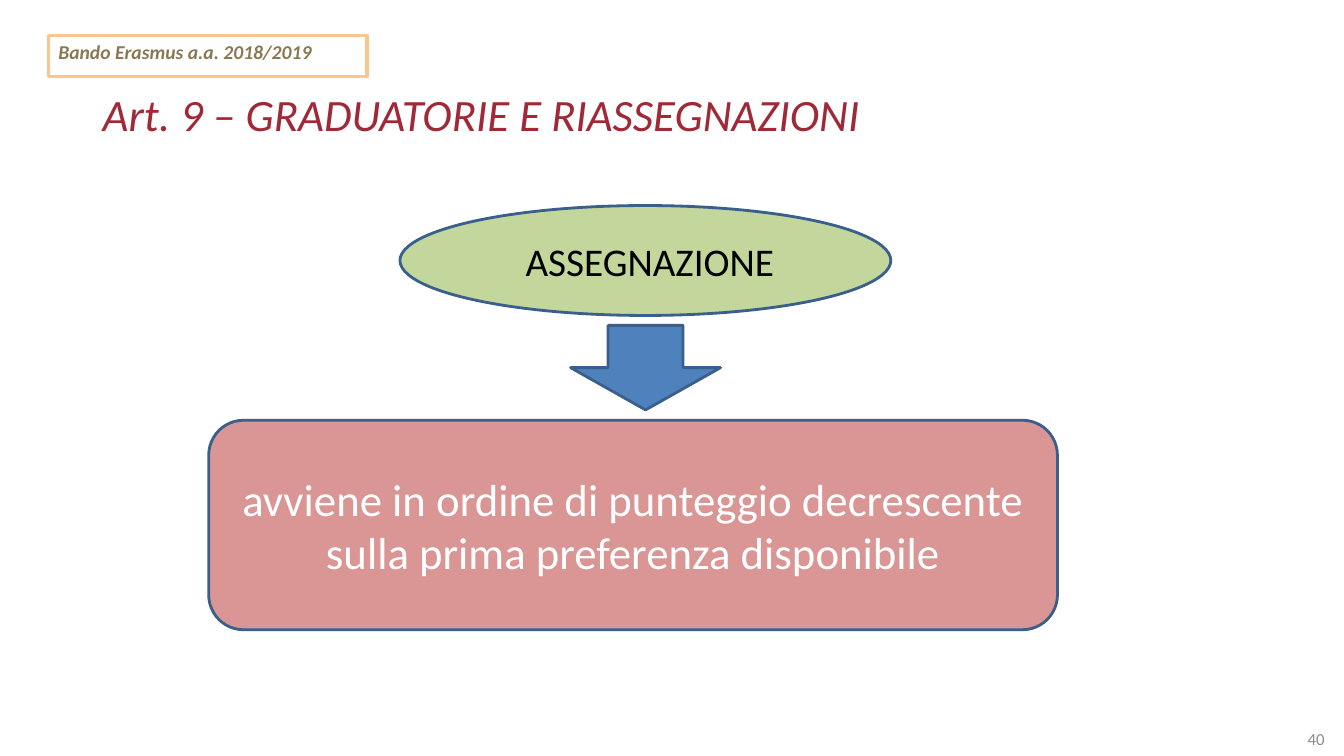
from dataclasses import dataclass

from pptx import Presentation
from pptx.dml.color import RGBColor
from pptx.enum.shapes import MSO_SHAPE as Shape
from pptx.enum.text import MSO_ANCHOR as Anchor, PP_ALIGN as Align
from pptx.util import Cm, Pt


@dataclass(frozen=True)
class Theme:
    font: str = "Calibri"
    title_color: str = "9F2936"
    number_color: str = "8B8B8B"
    banner_color: str = "887952"
    banner_line: str = "FBC58E"
    outline: str = "3A5F8C"
    step_fill: str = "C3D69B"
    step_color: str = "000000"
    arrow_fill: str = "4F81BD"
    rule_fill: str = "D99694"
    rule_color: str = "FFFFFF"
    large: int = 32
    medium: int = 28
    small: int = 14
    tiny: int = 12


theme = Theme()


def write(shape, text, size, color, align=Align.LEFT, anchor=Anchor.MIDDLE,
          bold=False, italic=False):
    """Put one styled paragraph into a shape or text box."""
    frame = shape.text_frame
    frame.word_wrap = True
    frame.vertical_anchor = anchor
    paragraph = frame.paragraphs[0]
    paragraph.text = text
    paragraph.alignment = align
    font = paragraph.font
    font.name, font.size = theme.font, Pt(size)
    font.bold, font.italic = bold, italic
    font.color.rgb = RGBColor.from_string(color)


def add_outlined(kind, left, top, width, height, fill=None,
                 line=theme.outline, weight=2):
    """Add a preset shape with a visible outline; lengths in centimetres."""
    shape = slide.shapes.add_shape(kind, Cm(left), Cm(top), Cm(width), Cm(height))
    shape.shadow.inherit = False
    if fill:
        shape.fill.solid()
        shape.fill.fore_color.rgb = RGBColor.from_string(fill)
    else:
        shape.fill.background()
    shape.line.color.rgb = RGBColor.from_string(line)
    shape.line.width = Pt(weight)
    return shape


presentation = Presentation()
presentation.slide_width = Cm(33.87)
presentation.slide_height = Cm(19.05)
slide = presentation.slides.add_slide(presentation.slide_layouts[6])

title = slide.shapes.add_textbox(Cm(2.34), Cm(1.02), Cm(29.82), Cm(3.68))
write(title, "Art. 9 – GRADUATORIE E RIASSEGNAZIONI", theme.large,
      theme.title_color, italic=True)

page_number = slide.shapes.add_textbox(Cm(32.39), Cm(18.21), Cm(1.24), Cm(0.84))
write(page_number, "40", theme.tiny, theme.number_color, Align.RIGHT)

rule = add_outlined(Shape.ROUNDED_RECTANGLE, 5.26, 10.59, 21.39, 5.28, theme.rule_fill)
write(rule, "avviene in ordine di punteggio decrescente sulla prima preferenza disponibile",
      theme.large, theme.rule_color, Align.CENTER)

add_outlined(Shape.DOWN_ARROW, 14.38, 8.2, 3.78, 2.13, theme.arrow_fill)

step = add_outlined(Shape.OVAL, 10.08, 5.18, 12.37, 2.77, theme.step_fill)
write(step, "ASSEGNAZIONE", theme.medium, theme.step_color, Align.CENTER)
step.text_frame.margin_left = Cm(0.47)

banner = add_outlined(Shape.RECTANGLE, 1.22, 0.89, 8.03, 1.04,
                      line=theme.banner_line, weight=2.25)
write(banner, "Bando Erasmus a.a. 2018/2019", theme.small, theme.banner_color,
      anchor=Anchor.TOP, bold=True, italic=True)

presentation.save("out.pptx")
